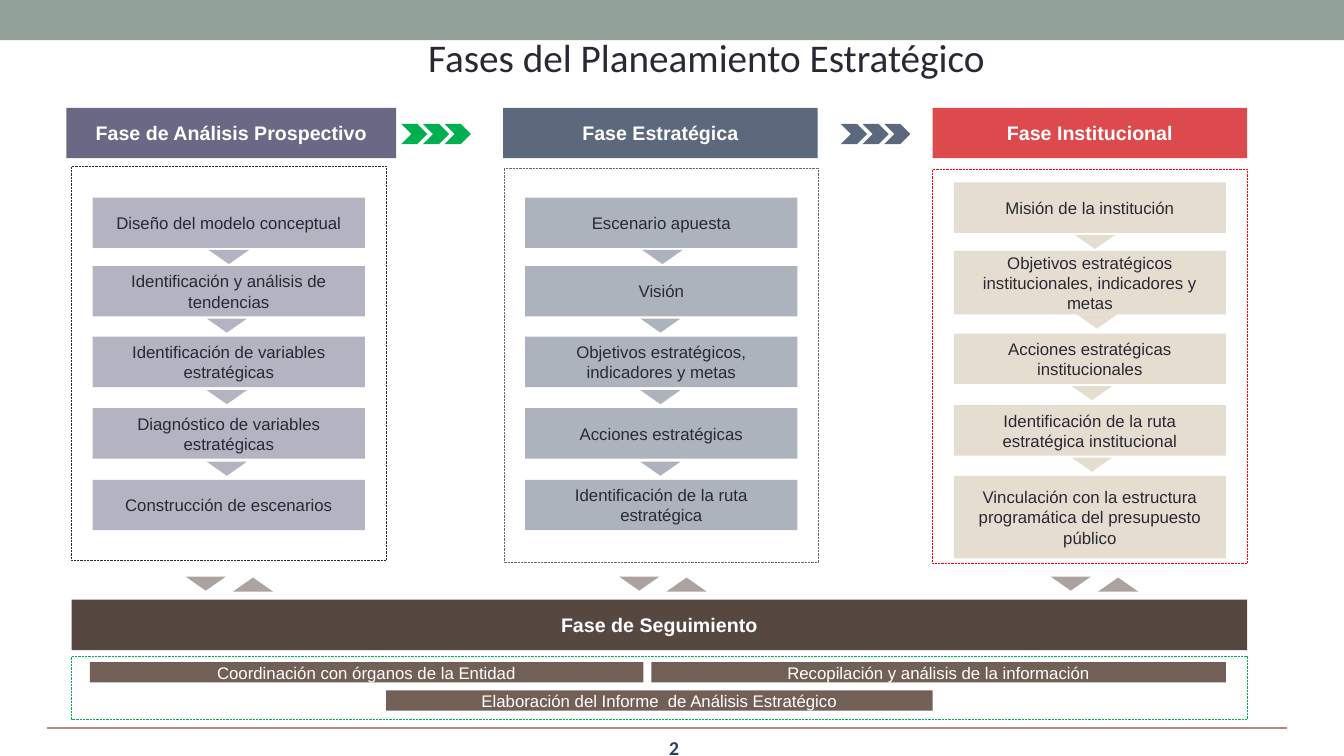
"""Build the slide on the phases of strategic planning."""
from dataclasses import dataclass

from lxml import etree
from pptx import Presentation
from pptx.dml.color import RGBColor
from pptx.enum import dml, shapes, text
from pptx.oxml import ns
from pptx.util import Inches, Pt

WHITE = RGBColor(0xFF, 0xFF, 0xFF)
INK = RGBColor(0x29, 0x29, 0x34)
NAVY = RGBColor(0x25, 0x40, 0x61)
SAGE = RGBColor(0x93, 0xA2, 0x99)
ROSE = RGBColor(0xBD, 0x86, 0x7C)
PURPLE = RGBColor(0x69, 0x69, 0x86)
SLATE = RGBColor(0x5C, 0x69, 0x7C)
CORAL = RGBColor(0xDC, 0x4A, 0x4D)
RED = RGBColor(0xFF, 0x00, 0x00)
SAND = RGBColor(0xCE, 0xBC, 0xA4)
GREEN = RGBColor(0x00, 0xB0, 0x50)
BROWN = RGBColor(0x56, 0x48, 0x41)
LIGHT_BROWN = RGBColor(0x72, 0x60, 0x56)

RECT = shapes.MSO_SHAPE.RECTANGLE
TRIANGLE = shapes.MSO_SHAPE.ISOSCELES_TRIANGLE
CHEVRON = shapes.MSO_SHAPE.CHEVRON

STEP_WIDTH, STEP_HEIGHT = 2.7, 0.5
ARROW_SIZE = (0.4, 0.14)
EVEN_TOPS = (1.96, 2.64, 3.34, 4.05, 4.76)
EVEN_HEIGHTS = (STEP_HEIGHT,) * 5
EVEN_ARROW_TOPS = (2.48, 3.16, 3.87, 4.58)


@dataclass
class Phase:
    """One column of the planning process."""
    name: str
    header: tuple
    header_color: RGBColor
    frame: tuple
    frame_color: RGBColor
    step_color: RGBColor
    step_left: float
    steps: tuple
    arrow_lefts: tuple
    feedback_left: float
    tops: tuple = EVEN_TOPS
    heights: tuple = EVEN_HEIGHTS
    arrow_tops: tuple = EVEN_ARROW_TOPS


PHASES = (
    Phase("Fase de Análisis Prospectivo", (0.66, 1.07, 3.27, 0.5), PURPLE,
          (0.71, 1.65, 3.12, 3.91), INK, PURPLE, 0.92,
          ("Diseño del modelo conceptual",
           "Identificación y análisis de tendencias",
           "Identificación de variables estratégicas",
           "Diagnóstico de variables estratégicas",
           "Construcción de escenarios"),
          (2.07, 2.05, 2.05, 2.05), 1.84),
    Phase("Fase Estratégica", (4.99, 1.07, 3.12, 0.5), SLATE,
          (5, 1.67, 3.12, 3.91), SLATE, SLATE, 5.21,
          ("Escenario apuesta",
           "Visión",
           "Objetivos estratégicos, indicadores y metas",
           "Acciones estratégicas",
           "Identificación de la ruta estratégica"),
          (6.37, 6.35, 6.35, 6.35), 6.14),
    Phase("Fase Institucional", (9.25, 1.07, 3.12, 0.5), CORAL,
          (9.25, 1.68, 3.12, 3.91), RED, SAND, 9.46,
          ("Misión de la institución",
           "Objetivos estratégicos institucionales, indicadores y metas",
           "Acciones estratégicas institucionales",
           "Identificación de la ruta estratégica institucional",
           "Vinculación con la estructura programática del presupuesto público"),
          (10.66, 10.68, 10.63, 10.63), 10.42,
          tops=(1.81, 2.49, 3.31, 4.02, 4.72),
          heights=(STEP_HEIGHT, 0.63, STEP_HEIGHT, STEP_HEIGHT, 0.82),
          arrow_tops=(2.33, 3.12, 3.83, 4.54)),
)

FOLLOW_UP = (
    ("Coordinación con órganos de la Entidad", (0.89, 6.57, 5.49, 0.2)),
    ("Elaboración del Informe  de Análisis Estratégico", (3.83, 6.85, 5.42, 0.2)),
    ("Recopilación y análisis de la información", (6.46, 6.57, 5.7, 0.2)),
)


def write(holder, words, size, color, font="Arial", bold=False):
    """Put one centred run of text in a shape or text box."""
    frame = holder.text_frame
    frame.word_wrap = True
    frame.vertical_anchor = text.MSO_ANCHOR.MIDDLE
    paragraph = frame.paragraphs[0]
    paragraph.alignment = text.PP_ALIGN.CENTER
    run = paragraph.add_run()
    run.text = words
    run.font.size = Pt(size)
    run.font.name = font
    run.font.bold = bold
    run.font.color.rgb = color


def add_label(slide, box, words, size, color, bold=False):
    """Add a Calibri text box."""
    label = slide.shapes.add_textbox(*map(Inches, box))
    write(label, words, size, color, "Calibri", bold)


def add_solid(slide, kind, box, color, alpha=100):
    """Add a filled shape without outline, see-through if alpha is below 100."""
    solid = slide.shapes.add_shape(kind, *map(Inches, box))
    solid.shadow.inherit = False
    solid.fill.solid()
    solid.fill.fore_color.rgb = color
    solid.line.fill.background()
    if alpha < 100:
        tint = solid.fill._xPr.find(ns.qn("a:solidFill"))[0]
        etree.SubElement(tint, ns.qn("a:alpha"), val=str(alpha * 1000))
    return solid


def add_frame(slide, box, color):
    """Add an empty dotted frame."""
    frame = slide.shapes.add_shape(RECT, *map(Inches, box))
    frame.shadow.inherit = False
    frame.fill.background()
    frame.line.color.rgb = color
    frame.line.width = Pt(0.5)
    frame.line.dash_style = dml.MSO_LINE.ROUND_DOT


def add_arrow(slide, left, top, color, down=True):
    """Add a half-transparent triangle pointing down or up."""
    arrow = add_solid(slide, TRIANGLE, (left, top, *ARROW_SIZE), color, 50)
    arrow.rotation = 180 if down else 0


def add_chevrons(slide, left, color):
    """Add three chevrons leading to the next phase."""
    for index in range(3):
        add_solid(slide, CHEVRON, (left + index * 0.215, 1.23, 0.26, 0.2), color)


def add_rule(slide):
    """Add the footer rule."""
    rule = slide.shapes.add_connector(
        shapes.MSO_CONNECTOR.STRAIGHT,
        Inches(0.47), Inches(7.22), Inches(12.76), Inches(7.22))
    rule.line.color.rgb = ROSE
    rule.line.width = Pt(1.25)
    etree.SubElement(rule._element.spPr, ns.qn("a:effectLst"))


def add_header(slide, box, name, color):
    """Add the title bar of a phase."""
    write(add_solid(slide, RECT, box, color), name, 14, WHITE, bold=True)


def add_phase(slide, phase):
    """Add a phase with its steps and the arrows between and below them."""
    add_header(slide, phase.header, phase.name, phase.header_color)
    add_frame(slide, phase.frame, phase.frame_color)
    for words, top, height in zip(phase.steps, phase.tops, phase.heights):
        box = (phase.step_left, top, STEP_WIDTH, height)
        step = add_solid(slide, RECT, box, phase.step_color, 50)
        write(step, words, 12, INK)
    for left, top in zip(phase.arrow_lefts, phase.arrow_tops):
        add_arrow(slide, left, top, phase.step_color)
    add_arrow(slide, phase.feedback_left, 5.72, BROWN)
    add_arrow(slide, phase.feedback_left + 0.47, 5.73, BROWN, down=False)


def add_follow_up(slide):
    """Add the follow-up phase along the bottom."""
    add_header(slide, (0.71, 5.95, 11.66, 0.5), "Fase de Seguimiento", BROWN)
    add_frame(slide, (0.71, 6.51, 11.66, 0.63), GREEN)
    for words, box in FOLLOW_UP:
        write(add_solid(slide, RECT, box, LIGHT_BROWN), words, 12, WHITE)


def main():
    """Build and save the slide."""
    deck = Presentation()
    deck.slide_width, deck.slide_height = Inches(13.33), Inches(7.5)
    slide = deck.slides.add_slide(deck.slide_layouts[6])
    add_solid(slide, RECT, (0, 0, 13.33, 0.4), SAGE)
    add_rule(slide)
    add_label(slide, (5.13, 7.22, 3.11, 0.4), "2", 14, NAVY, bold=True)
    add_label(slide, (1.65, 0.31, 10.71, 0.5),
              "Fases del Planeamiento Estratégico", 28, INK)
    for phase in PHASES:
        add_phase(slide, phase)
    add_chevrons(slide, 3.98, GREEN)
    add_chevrons(slide, 8.34, SLATE)
    add_follow_up(slide)
    deck.save("out.pptx")


if __name__ == "__main__":
    main()
